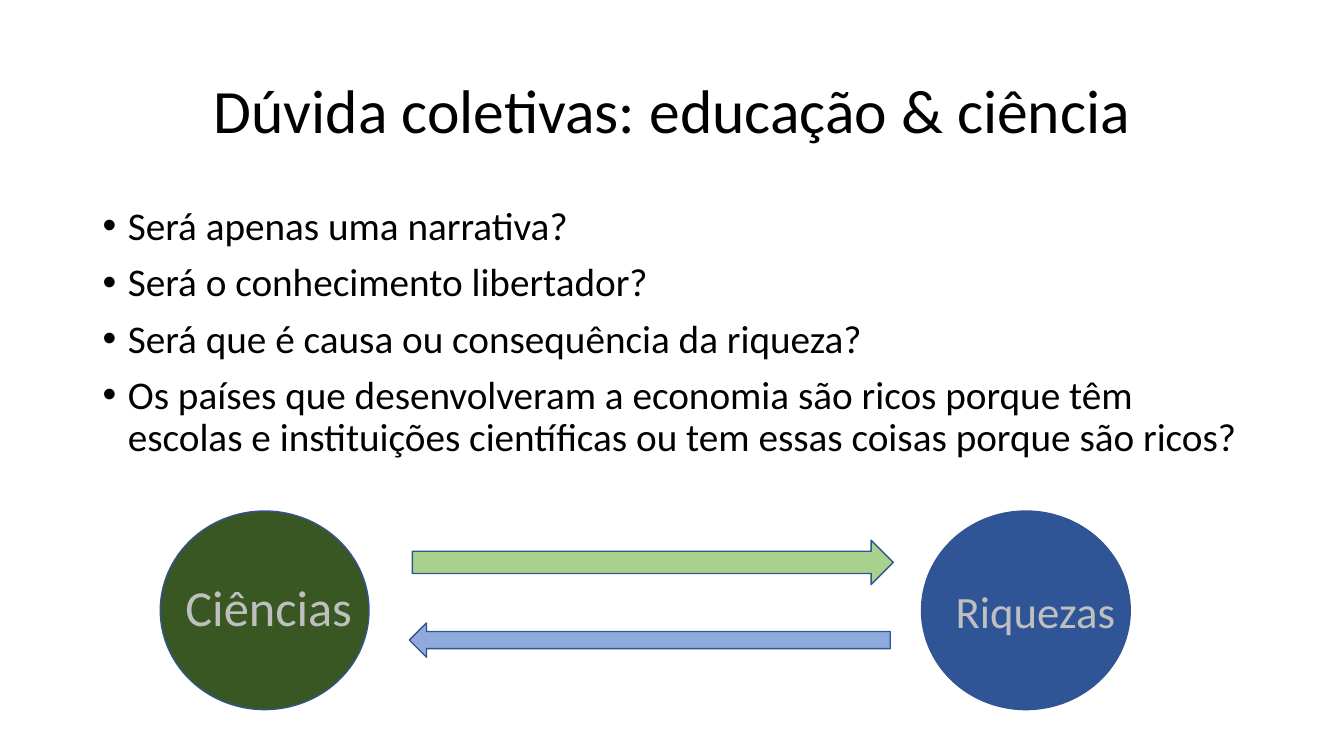
"""Builds a slide on whether science and wealth cause one another."""
from dataclasses import dataclass

import pptx
import pptx.dml.color
import pptx.enum.shapes
import pptx.enum.text
import pptx.oxml.ns
import pptx.util
from lxml import etree
from pptx.util import Inches

SHAPES = pptx.enum.shapes.MSO_SHAPE
ALIGN = pptx.enum.text.PP_ALIGN
ANCHOR = pptx.enum.text.MSO_ANCHOR


@dataclass(frozen=True)
class Theme:
    font: str = "Calibri"
    text: str = "000000"
    label: str = "BFBFBF"
    outline: str = "325491"
    science: str = "385723"
    wealth: str = "2F5597"
    forward: str = "A9D18E"
    backward: str = "8FAADC"
    title_size: int = 44
    body_size: int = 28
    science_size: int = 36
    wealth_size: int = 32


THEME = Theme()
QUESTIONS = [
    "Será apenas uma narrativa?",
    "Será o conhecimento libertador?",
    "Será que é causa ou consequência da riqueza?",
    "Os países que desenvolveram a economia são ricos porque têm escolas e "
    "instituições científicas ou tem essas coisas porque são ricos?",
]


def rgb(color):
    return pptx.dml.color.RGBColor.from_string(color)


def apply(target, values):
    for name, value in values.items():
        setattr(target, name, value)


def add_text(slide, box, lines, size, color, paragraph_format, anchor=ANCHOR.TOP):
    frame = slide.shapes.add_textbox(*map(Inches, box)).text_frame
    apply(frame, {"word_wrap": True, "vertical_anchor": anchor})
    for index, line in enumerate(lines):
        paragraph = frame.add_paragraph() if index else frame.paragraphs[0]
        apply(paragraph, paragraph_format)
        run = paragraph.add_run()
        run.text = line
        apply(run.font, {"name": THEME.font, "size": pptx.util.Pt(size)})
        run.font.color.rgb = rgb(color)
    return frame


def add_bullets(frame, indent):
    for paragraph in frame.paragraphs:
        properties = paragraph._p.get_or_add_pPr()
        properties.set("marL", str(Inches(indent)))
        properties.set("indent", str(Inches(-indent)))
        font = etree.SubElement(properties, pptx.oxml.ns.qn("a:buFont"))
        font.set("typeface", "Arial")
        bullet = etree.SubElement(properties, pptx.oxml.ns.qn("a:buChar"))
        bullet.set("char", "•")


def add_figure(slide, kind, box, fill, rotation=0):
    shape = slide.shapes.add_shape(kind, *map(Inches, box))
    shape.rotation = rotation
    shape.shadow.inherit = False
    shape.fill.solid()
    shape.fill.fore_color.rgb = rgb(fill)
    shape.line.color.rgb = rgb(THEME.outline)
    shape.line.width = pptx.util.Pt(1)


def main():
    presentation = pptx.Presentation()
    apply(presentation, {"slide_width": Inches(13.33), "slide_height": Inches(7.5)})
    slide = presentation.slides.add_slide(presentation.slide_layouts[6])

    centred = {"alignment": ALIGN.CENTER}
    add_text(slide, (0.92, 0.4, 11.5, 1.45), ["Dúvida coletivas: educação & ciência"],
             THEME.title_size, THEME.text, {**centred, "line_spacing": 0.9}, ANCHOR.MIDDLE)
    body = add_text(slide, (0.92, 2, 11.5, 2.74), QUESTIONS, THEME.body_size, THEME.text,
                    {"line_spacing": 0.9, "space_before": pptx.util.Pt(10)})
    add_bullets(body, 0.25)

    for left, fill in ((1.59, THEME.science), (9.14, THEME.wealth)):
        add_figure(slide, SHAPES.OVAL, (left, 5.07, 2.07, 1.97), fill)
    for label, box, size in (
        ("Ciências", (1.59, 5.67, 2.15, 0.71), THEME.science_size),
        ("Riquezas", (9.13, 5.74, 2.28, 0.64), THEME.wealth_size),
    ):
        add_text(slide, box, [label], size, THEME.label, centred)
    for box, fill, rotation in (
        ((4.09, 5.36, 4.77, 0.44), THEME.forward, 0),
        ((4.06, 6.18, 4.77, 0.34), THEME.backward, 180),
    ):
        add_figure(slide, SHAPES.RIGHT_ARROW, box, fill, rotation)

    presentation.save("out.pptx")


if __name__ == "__main__":
    main()
